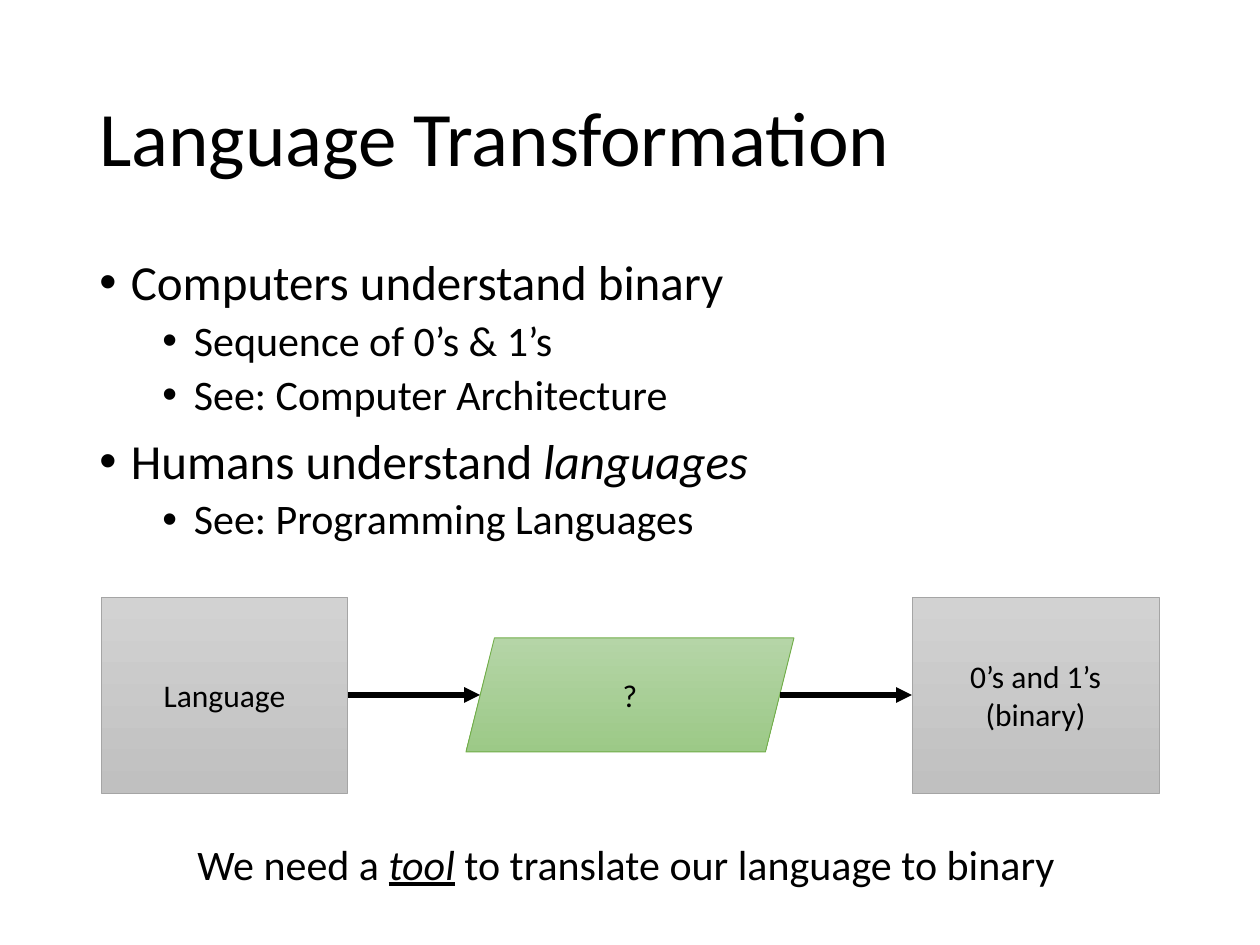
from dataclasses import dataclass

from lxml import etree
from pptx import Presentation
from pptx import util as u
from pptx.dml.color import RGBColor
from pptx.enum import shapes, text
from pptx.oxml import ns

WIDTH, HEIGHT = 1260, 945


@dataclass(frozen=True)
class Theme:
    """Colours, font and type sizes of the slide."""
    font: str = "Calibri"
    ink: str = "000000"
    grey: tuple = ("D2D2D2", "C0C0C0", "A5A5A5")
    green: tuple = ("B5D5A7", "9CC987", "70AD47")
    title: int = 44
    bullets: tuple = (28, 24)
    label: int = 18
    caption: int = 24


THEME = Theme()


def px(length):
    """Turn whole pixels into EMU at 126 pixels to the inch."""
    return u.Emu(round(length * 914400 / 126))


def colour(code):
    """Turn a hex code into a colour."""
    return RGBColor.from_string(code)


def write(para, words, size, italic=None, underline=None):
    """Add one formatted span to a paragraph."""
    span = para.add_run()
    span.text = words
    font = span.font
    font.name, font.size = THEME.font, u.Pt(size)
    font.color.rgb = colour(THEME.ink)
    font.italic, font.underline = italic, underline


def add_text_box(page, left, top, width, height, anchor=text.MSO_ANCHOR.TOP, wrap=True):
    """Add an empty text box and return its frame."""
    frame = page.shapes.add_textbox(px(left), px(top), px(width), px(height)).text_frame
    frame.word_wrap, frame.vertical_anchor = wrap, anchor
    return frame


def add_title(page, words):
    """Add the slide title."""
    frame = add_text_box(page, 87, 50, 1086, 183, anchor=text.MSO_ANCHOR.MIDDLE)
    para = frame.paragraphs[0]
    para.line_spacing = 0.9
    write(para, words, THEME.title)


def add_bullets(page, items):
    """Add the bullet list from pairs of level and spans."""
    frame = add_text_box(page, 87, 252, 1086, 600)
    for index, (level, spans) in enumerate(items):
        para = frame.add_paragraph() if index else frame.paragraphs[0]
        para.level, para.line_spacing = level, 0.9
        para.space_before = u.Pt((10, 5)[level])
        properties = para._p.get_or_add_pPr()
        properties.set("marL", str(u.Inches(0.25 + 0.5 * level)))
        properties.set("indent", str(u.Inches(-0.25)))
        etree.SubElement(properties, ns.qn("a:buFont")).set("typeface", "Arial")
        etree.SubElement(properties, ns.qn("a:buChar")).set("char", "•")
        for words, italic in spans:
            write(para, words, THEME.bullets[level], italic=italic)


def add_node(page, kind, left, top, width, height, lines, palette):
    """Add a labelled shape with a vertical gradient."""
    node = page.shapes.add_shape(kind, px(left), px(top), px(width), px(height))
    node.shadow.inherit = False
    node.fill.gradient()
    node.fill.gradient_angle = 270
    for stop, position, code in zip(node.fill.gradient_stops, (0, 1), palette):
        stop.position, stop.color.rgb = position, colour(code)
    node.line.color.rgb, node.line.width = colour(palette[2]), u.Pt(0.5)
    frame = node.text_frame
    frame.vertical_anchor = text.MSO_ANCHOR.MIDDLE
    for index, words in enumerate(lines):
        para = frame.add_paragraph() if index else frame.paragraphs[0]
        para.alignment = text.PP_ALIGN.CENTER
        write(para, words, THEME.label)
    return node


def add_arrow(page, start, end, y):
    """Add a horizontal arrow."""
    arrow = page.shapes.add_connector(
        shapes.MSO_CONNECTOR.STRAIGHT, px(start), px(y), px(end), px(y))
    arrow.line.color.rgb, arrow.line.width = colour(THEME.ink), u.Pt(3)
    etree.SubElement(arrow.line._get_or_add_ln(), ns.qn("a:tailEnd")).set("type", "triangle")
    etree.SubElement(arrow._element.spPr, ns.qn("a:effectLst"))
    return arrow


def add_flow(page):
    """Add the translation flow, mirrored about the slide's middle."""
    middle, left, width, height = 695, 101, 247, 196
    tool_width, tool_height = 328, 114
    right, top = WIDTH - left - width, middle - height // 2
    tool_left = (WIDTH - tool_width) // 2
    edge = tool_left + tool_height // 8
    kinds = shapes.MSO_SHAPE
    source = add_node(page, kinds.RECTANGLE, left, top, width, height,
                      ["Language"], THEME.grey)
    target = add_node(page, kinds.RECTANGLE, right, top, width, height,
                      ["0’s and 1’s", "(binary)"], THEME.grey)
    add_node(page, kinds.PARALLELOGRAM, tool_left, middle - tool_height // 2,
             tool_width, tool_height, ["?"], THEME.green)
    add_arrow(page, left + width, edge, middle).begin_connect(source, 3)
    add_arrow(page, WIDTH - edge, right, middle).end_connect(target, 1)


def add_caption(page):
    """Add the closing sentence."""
    frame = add_text_box(page, 185, 832, 891, 63, wrap=False)
    frame.auto_size = text.MSO_AUTO_SIZE.SHAPE_TO_FIT_TEXT
    para = frame.paragraphs[0]
    write(para, "We need a ", THEME.caption)
    write(para, "tool", THEME.caption, italic=True, underline=True)
    write(para, " to translate our language to binary", THEME.caption)


def main():
    """Build and save the slide."""
    deck = Presentation()
    deck.slide_width, deck.slide_height = px(WIDTH), px(HEIGHT)
    page = deck.slides.add_slide(deck.slide_layouts[6])
    add_title(page, "Language Transformation")
    add_bullets(page, [
        (0, [("Computers understand binary", None)]),
        (1, [("Sequence of 0’s & 1’s", None)]),
        (1, [("See: Computer Architecture", None)]),
        (0, [("Humans understand ", None), ("languages", True)]),
        (1, [("See: Programming Languages", None)]),
    ])
    add_flow(page)
    add_caption(page)
    deck.save("out.pptx")


if __name__ == "__main__":
    main()
